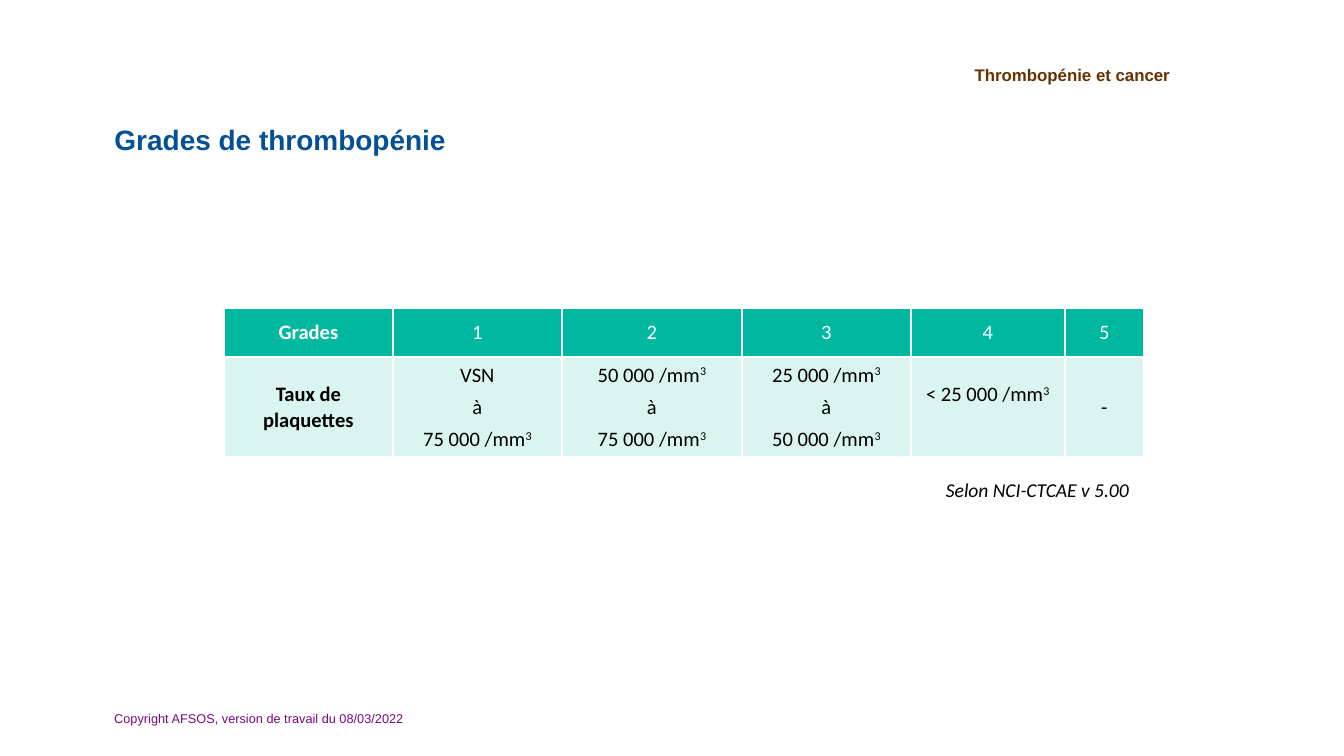
from lxml.etree import SubElement
from pptx import Presentation
from pptx.dml.color import RGBColor
from pptx.enum.text import MSO_ANCHOR, MSO_AUTO_SIZE, PP_ALIGN
from pptx.oxml.ns import qn
from pptx.util import Pt

EMU_PER_PX = 914400 / 134.4
WHITE, BLACK = "FFFFFF", "000000"
TEAL, PALE_TEAL = "00B7A0", "D9F4F1"

COLUMN_WIDTHS = [169, 169, 180, 169, 154, 79]
ROW_HEIGHTS = [49, 100]
GRADES = ["Grades", "1", "2", "3", "4", "5"]
# A caret marks the start of a superscript.
PLATELETS = [
    "Taux de plaquettes",
    "VSN\nà\n75 000 /mm^3",
    "50 000 /mm^3\nà\n75 000 /mm^3",
    "25 000 /mm^3\nà\n50 000 /mm^3",
    "< 25 000 /mm^3",
    "-",
]


def px(length):
    return round(length * EMU_PER_PX)


def rgb(value):
    return RGBColor.from_string(value)


def place(shape, left, top, width, height):
    shape.left, shape.top = px(left), px(top)
    shape.width, shape.height = px(width), px(height)


def add_run(paragraph, text, size, color, font="Arial", bold=False, italic=False):
    run = paragraph.add_run()
    run.text = text
    run.font.name, run.font.size = font, Pt(size)
    run.font.bold, run.font.italic = bold, italic
    run.font.color.rgb = rgb(color)
    return run


def write_line(frame, text, size, color, align=PP_ALIGN.LEFT, **style):
    """Fill a frame with one vertically centred line."""
    frame.word_wrap = True
    frame.vertical_anchor = MSO_ANCHOR.MIDDLE
    paragraph = frame.paragraphs[0]
    paragraph.alignment = align
    add_run(paragraph, text, size, color, **style)


def add_label(slide, box, text, size, color, **style):
    label = slide.shapes.add_textbox(*map(px, box))
    write_line(label.text_frame, text, size, color, **style)
    return label


def set_margins(target):
    target.margin_left = target.margin_right = px(9)
    target.margin_top = target.margin_bottom = px(5)


def add_borders(cell):
    properties = cell._tc.get_or_add_tcPr()
    for side in ("lnL", "lnR", "lnT", "lnB"):
        border = SubElement(properties, qn(f"a:{side}"), w=str(Pt(1)))
        fill = SubElement(border, qn("a:solidFill"))
        SubElement(fill, qn("a:srgbClr"), val=WHITE)


def fill_cell(cell, text, fill, color, bold):
    set_margins(cell)
    cell.vertical_anchor = MSO_ANCHOR.MIDDLE
    add_borders(cell)
    cell.fill.solid()
    cell.fill.fore_color.rgb = rgb(fill)
    for index, line in enumerate(text.split("\n")):
        frame = cell.text_frame
        paragraph = frame.add_paragraph() if index else frame.paragraphs[0]
        paragraph.alignment = PP_ALIGN.CENTER
        paragraph.line_spacing = 1.02
        if index:
            paragraph.space_before = Pt(3.5)
        base, _, exponent = line.partition("^")
        add_run(paragraph, base, 11, color, font="Calibri", bold=bold)
        if exponent:
            run = add_run(paragraph, exponent, 11, color, font="Calibri")
            run.font._element.set("baseline", "30000")


def add_grade_table(slide):
    box = (224, 308, sum(COLUMN_WIDTHS), sum(ROW_HEIGHTS))
    table = slide.shapes.add_table(2, len(GRADES), *map(px, box)).table
    for column, width in zip(table.columns, COLUMN_WIDTHS):
        column.width = px(width)
    for row, height in zip(table.rows, ROW_HEIGHTS):
        row.height = px(height)
    rows = [(GRADES, TEAL, WHITE), (PLATELETS, PALE_TEAL, BLACK)]
    for row, (texts, fill, color) in enumerate(rows):
        for column, text in enumerate(texts):
            fill_cell(table.cell(row, column), text, fill, color, column == 0)
    # The grade 4 threshold sits above the middle of its cell.
    table.cell(1, 4).margin_bottom = px(31)


def add_reference(slide):
    reference = add_label(slide, (937, 473, 207, 34), "Selon NCI-CTCAE v 5.00",
                          10.5, BLACK, font="Calibri", italic=True)
    frame = reference.text_frame
    set_margins(frame)
    frame.word_wrap = False
    frame.vertical_anchor = MSO_ANCHOR.TOP
    frame.auto_size = MSO_AUTO_SIZE.SHAPE_TO_FIT_TEXT


def main():
    presentation = Presentation()
    presentation.slide_width, presentation.slide_height = px(1344), px(756)
    slide = presentation.slides.add_slide(presentation.slide_layouts[5])

    title = slide.shapes.title
    place(title, 101, 93, 1142, 93)
    write_line(title.text_frame, "Grades de thrombopénie", 15, "045094", bold=True)

    add_label(slide, (789, 45, 394, 60), "Thrombopénie et cancer", 9, "663300",
              align=PP_ALIGN.RIGHT, bold=True)
    add_grade_table(slide)
    add_reference(slide)
    add_label(slide, (101, 699, 454, 40),
              "Copyright AFSOS, version de travail du 08/03/2022", 6.8, "770980")
    presentation.save("out.pptx")


if __name__ == "__main__":
    main()
